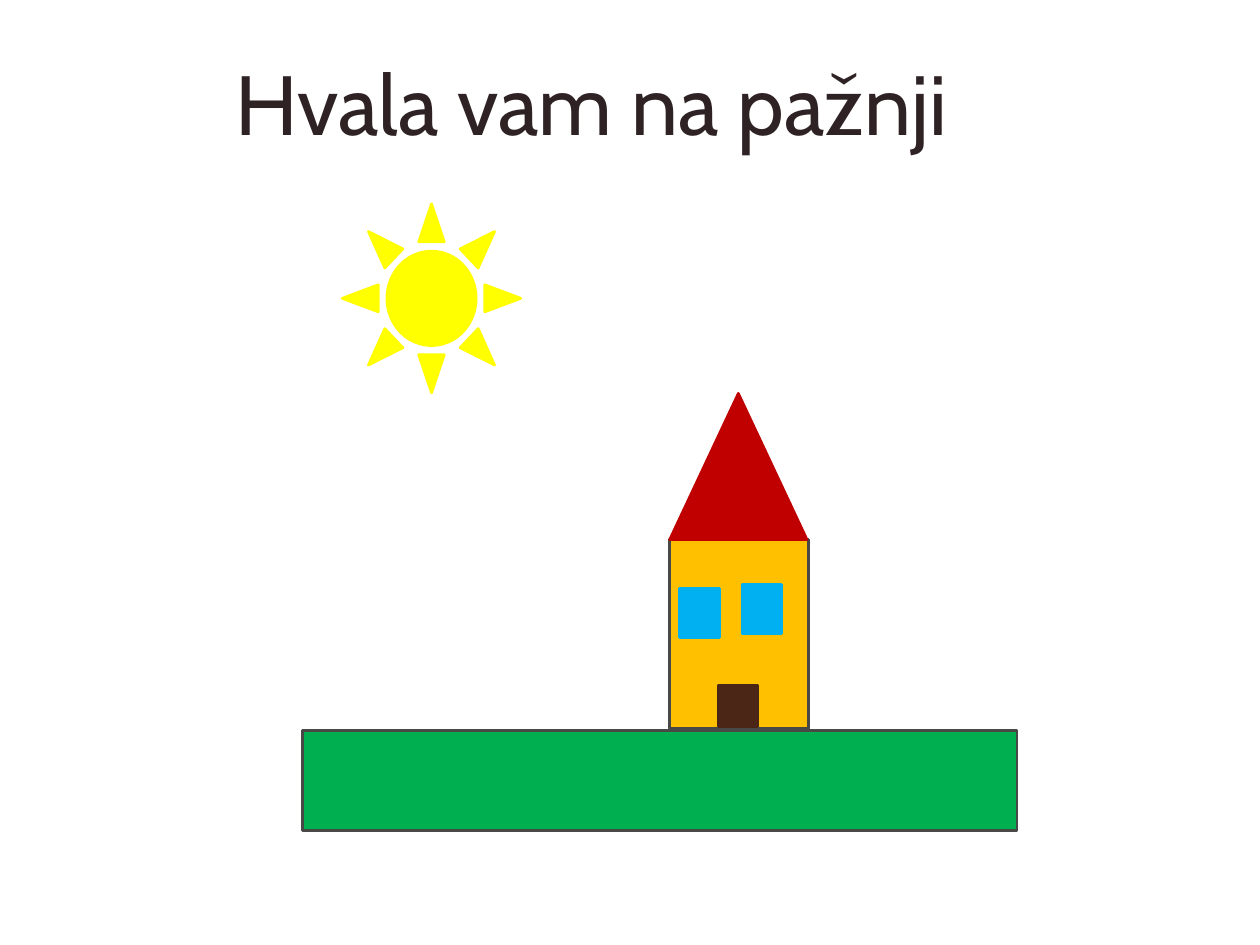
from pptx import Presentation
from pptx.dml.color import RGBColor
from pptx.enum.shapes import MSO_SHAPE as Kind
from pptx.enum.text import MSO_ANCHOR as Anchor, MSO_AUTO_SIZE as Fit, PP_ALIGN as Align
from pptx.util import Cm, Pt


def color(code):
    return RGBColor.from_string(code)


class Scene:
    font = "Cabin"
    ink = "2E2224"
    edge = "484946"
    line = Pt(1.5)

    def __init__(self, deck):
        # Layout 5 is "Title Only"
        self.slide = deck.slides.add_slide(deck.slide_layouts[5])

    def title(self, text, x, y, w, h, size):
        box = self.slide.shapes.title
        box.left, box.top, box.width, box.height = Cm(x), Cm(y), Cm(w), Cm(h)
        frame = box.text_frame
        frame.auto_size = Fit.NONE
        frame.word_wrap = True
        frame.vertical_anchor = Anchor.TOP
        para = frame.paragraphs[0]
        para.alignment = Align.LEFT
        run = para.add_run()
        run.text = text
        run.font.name = self.font
        run.font.size = Pt(size)
        run.font.color.rgb = color(self.ink)

    def shape(self, kind, x, y, w, h, fill, edge=None):
        item = self.slide.shapes.add_shape(kind, Cm(x), Cm(y), Cm(w), Cm(h))
        item.shadow.inherit = False
        item.fill.solid()
        item.fill.fore_color.rgb = color(fill)
        item.line.color.rgb = color(edge or fill)
        item.line.width = self.line
        return item


def main():
    deck = Presentation()
    deck.slide_width, deck.slide_height = Cm(25.4), Cm(19.05)
    scene = Scene(deck)

    scene.title("Hvala vam na pažnji", 4.5, 0.91, 15.19, 2.31, 48)

    # Ground
    scene.shape(Kind.RECTANGLE, 6.1, 14.73, 14.4, 2.01, "00B050", scene.edge)

    # House: wall, roof, windows, door
    scene.shape(Kind.RECTANGLE, 13.5, 10.88, 2.8, 3.81, "FFC000", scene.edge)
    scene.shape(Kind.ISOSCELES_TRIANGLE, 13.5, 7.93, 2.77, 2.95, "C00000")
    for x, y in ((14.96, 11.78), (13.7, 11.86)):
        scene.shape(Kind.RECTANGLE, x, y, 0.8, 0.99, "00B0F0")
    scene.shape(Kind.RECTANGLE, 14.48, 13.81, 0.79, 0.84, "4B2616")

    # Sun
    scene.shape(Kind.SUN, 6.9, 4.11, 3.6, 3.81, "FFFF00")

    deck.save("out.pptx")


if __name__ == "__main__":
    main()
